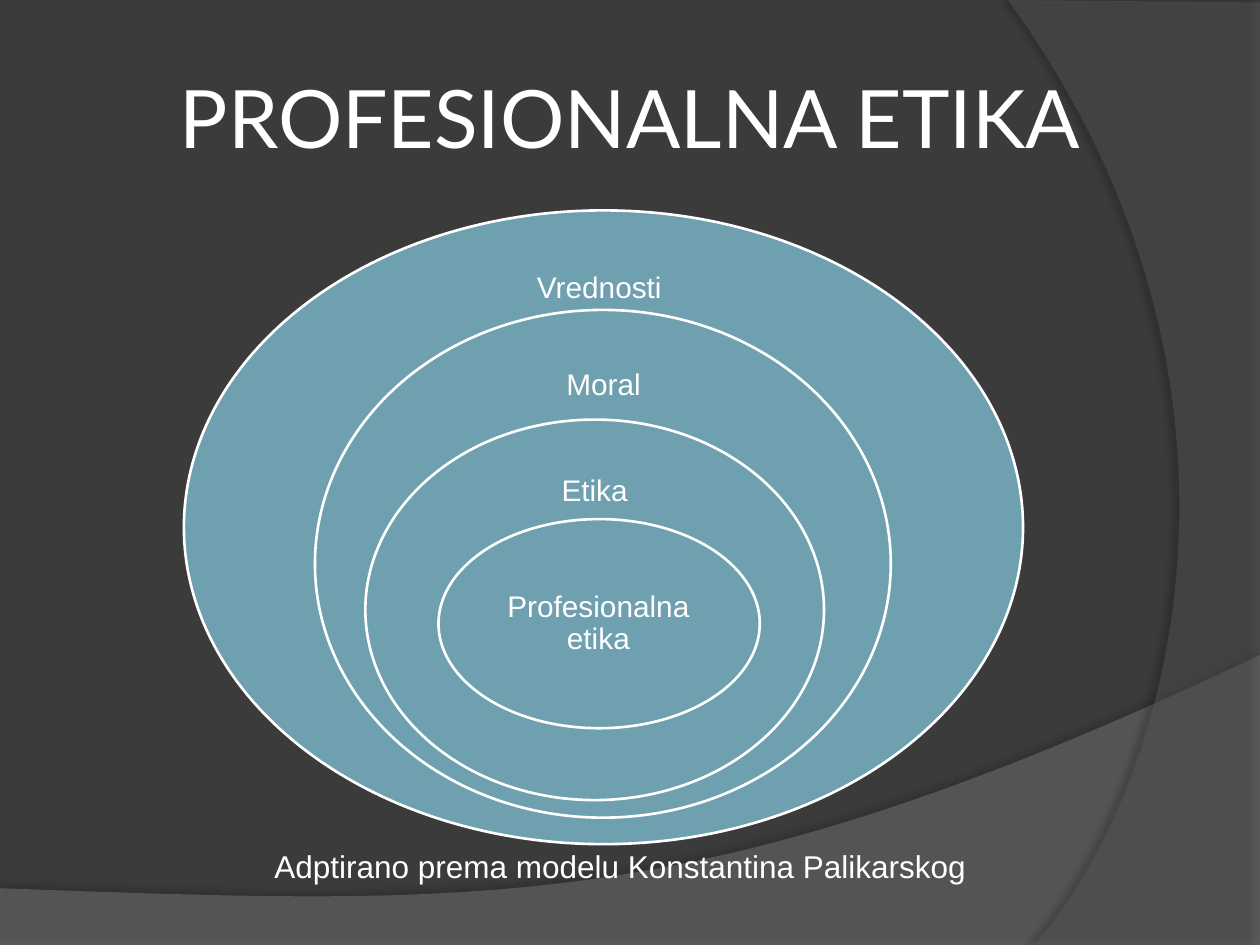
from dataclasses import dataclass

from lxml.etree import SubElement
from pptx import Presentation
from pptx.dml.color import RGBColor
from pptx.enum.shapes import MSO_SHAPE
from pptx.enum.text import MSO_ANCHOR, MSO_AUTO_SIZE, PP_ALIGN
from pptx.oxml.ns import qn
from pptx.util import Inches, Pt


@dataclass(frozen=True)
class Theme:
    background: str = "3B3B3B"
    wave: str = "7F7F7F"
    arc: str = "5E5E5E"
    ring: str = "6EA0B0"
    light: str = "FFFFFF"
    shadow: str = "000000"
    title_font: str = "Lato"
    body_font: str = "Arial"
    title_size: int = 46
    label_size: int = 17
    caption_size: int = 18
    outline: float = 1.5


THEME = Theme()
CURVE_STEPS = 60

# Ellipse and label bounds, from the outermost ring inwards
RINGS = [
    ("Vrednosti ", (1.46, 1.67, 6.66, 5.03), (3.86, 1.92, 1.86, 0.75)),
    ("Moral", (2.5, 2.46, 4.57, 4.03), (3.99, 2.7, 1.6, 0.72)),
    ("Etika", (2.9, 3.33, 3.64, 3.02), (3.87, 3.56, 1.7, 0.68)),
    ("Profesionalna etika", (3.48, 4.12, 2.55, 1.66), (3.85, 4.54, 1.8, 0.83)),
]


def color(value):
    return RGBColor.from_string(value)


def inches(values):
    return [Inches(value) for value in values]


def curve(start, control_1, control_2, end):
    """Points along a cubic Bezier curve, both ends included."""
    points = []
    for step in range(CURVE_STEPS + 1):
        t = step / CURVE_STEPS
        u = 1 - t
        points.append(tuple(
            u**3 * a + 3 * u**2 * t * b + 3 * u * t**2 * c + t**3 * d
            for a, b, c, d in zip(start, control_1, control_2, end)
        ))
    return points


def add_swoosh(page, points, fill, opacity, shadow_opacity, distance, angle):
    """A translucent background outline with a soft shadow."""
    corners = [tuple(inches(point)) for point in points]
    builder = page.shapes.build_freeform(*corners[0])
    builder.add_line_segments(corners[1:], close=True)
    swoosh = builder.convert_to_shape()
    swoosh.fill.solid()
    swoosh.fill.fore_color.rgb = color(fill)
    swoosh.line.fill.background()
    swoosh.shadow.inherit = False

    properties = swoosh.element.spPr
    fill_color = properties.find(qn("a:solidFill")).find(qn("a:srgbClr"))
    SubElement(fill_color, qn("a:alpha"), val=str(opacity * 1000))
    shadow = SubElement(
        properties.find(qn("a:effectLst")), qn("a:outerShdw"),
        blurRad=str(Pt(4)), dist=str(Pt(distance)), dir=str(angle * 60000),
        algn="ctr", rotWithShape="0",
    )
    shadow_color = SubElement(shadow, qn("a:srgbClr"), val=THEME.shadow)
    SubElement(shadow_color, qn("a:alpha"), val=str(shadow_opacity * 1000))


def write_text(frame, text, size, font, align, inset=None):
    if inset is not None:
        frame.margin_left = frame.margin_right = Inches(inset)
        frame.margin_top = frame.margin_bottom = Inches(inset)
    para = frame.paragraphs[0]
    para.alignment = align
    span = para.add_run()
    span.text = text
    span.font.size = Pt(size)
    span.font.name = font
    span.font.color.rgb = color(THEME.light)
    return para


def add_title(page, text):
    title = page.shapes.title
    title.left, title.top, title.width, title.height = inches((0.5, 0.3, 9, 1.25))
    frame = title.text_frame
    frame.vertical_anchor = MSO_ANCHOR.MIDDLE
    write_text(frame, text, THEME.title_size, THEME.title_font, PP_ALIGN.CENTER, 0.05)
    # Bring the title in front of the background
    title.element.getparent().append(title.element)


def add_ring(page, text, bounds, label_bounds):
    ring = page.shapes.add_shape(MSO_SHAPE.OVAL, *inches(bounds))
    ring.shadow.inherit = False
    ring.fill.solid()
    ring.fill.fore_color.rgb = color(THEME.ring)
    ring.line.color.rgb = color(THEME.light)
    ring.line.width = Pt(THEME.outline)

    frame = page.shapes.add_textbox(*inches(label_bounds)).text_frame
    frame.word_wrap = True
    frame.vertical_anchor = MSO_ANCHOR.MIDDLE
    para = write_text(
        frame, text, THEME.label_size, THEME.body_font, PP_ALIGN.CENTER, 0.13
    )
    para.line_spacing = 0.9


def add_caption(page, text):
    frame = page.shapes.add_textbox(*inches((2.08, 6.67, 5.74, 0.4))).text_frame
    frame.word_wrap = False
    frame.auto_size = MSO_AUTO_SIZE.SHAPE_TO_FIT_TEXT
    write_text(frame, text, THEME.caption_size, THEME.body_font, PP_ALIGN.LEFT)


def main():
    deck = Presentation()
    deck.slide_width, deck.slide_height = Inches(10), Inches(7.5)
    page = deck.slides.add_slide(deck.slide_layouts[5])

    # Background with two swooshes
    page.background.fill.solid()
    page.background.fill.fore_color.rgb = color(THEME.background)
    wave = [(0, 7.5), (10, 7.5)]
    wave += curve((10, 5.2), (5.59, 7.29), (3.91, 7.19), (0, 7.05))
    add_swoosh(page, wave, THEME.wave, 45, 35, 3.5, 270)
    arc = [(10, 0.02), (10, 7.5)]
    arc += curve((8.21, 7.5), (9.35, 6.19), (10.18, 3), (8, 0))
    add_swoosh(page, arc, THEME.arc, 40, 45, 4, 180)

    # Title, nested rings and source line
    add_title(page, "PROFESIONALNA ETIKA")
    for text, bounds, label_bounds in RINGS:
        add_ring(page, text, bounds, label_bounds)
    add_caption(page, "Adptirano prema modelu Konstantina Palikarskog")

    deck.save("out.pptx")


if __name__ == "__main__":
    main()
